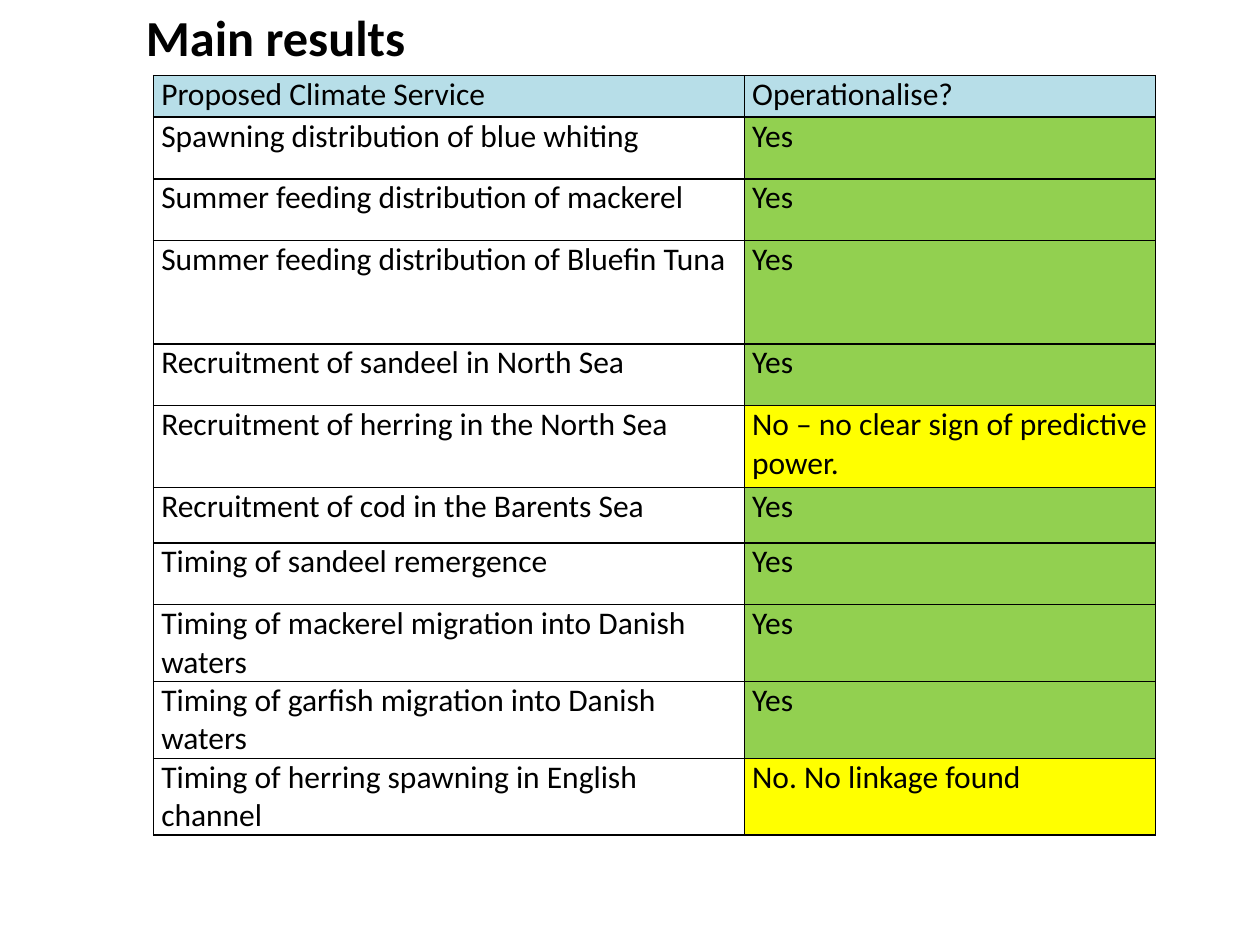
"""Build the "Main results" slide: proposed climate services and whether to operationalise them."""
from lxml.etree import SubElement
from pptx import Presentation
from pptx.dml.color import RGBColor
from pptx.enum.text import MSO_ANCHOR, PP_ALIGN
from pptx.oxml.ns import qn
from pptx.util import Inches, Pt

FONT = "Calibri"
COLORS = {"text": "000000", "border": "000000", "header": "B7DEE8",
          "yes": "92D050", "no": "FFFF00"}
TITLE = "Main results"
HEADER = ("Proposed Climate Service", "Operationalise?")
SERVICES = [
    ("Spawning distribution of blue whiting", "Yes", 0.49),
    ("Summer feeding distribution of mackerel", "Yes", 0.49),
    ("Summer feeding distribution of Bluefin Tuna", "Yes", 0.82),
    ("Recruitment of sandeel in North Sea", "Yes", 0.49),
    ("Recruitment of herring in the North Sea", "No – no clear sign of predictive power.", 0.65),
    ("Recruitment of cod in the Barents Sea", "Yes", 0.44),
    ("Timing of sandeel remergence", "Yes", 0.49),
    ("Timing of mackerel migration into Danish waters", "Yes", 0.61),
    ("Timing of garfish migration into Danish waters", "Yes", 0.61),
    ("Timing of herring spawning in English channel", "No. No linkage found", 0.61),
]
JUSTIFIED_ROWS = (3, 4)
COLUMNS = (4.69, 3.26)
HEADER_HEIGHT = 0.33


def add_text(p, text, size, bold=False):
    r = p.add_run()
    r.text = text
    r.font.name, r.font.size, r.font.bold = FONT, Pt(size), bold
    r.font.color.rgb = RGBColor.from_string(COLORS["text"])


def add_borders(cell, width=1):
    tc_pr = cell._tc.get_or_add_tcPr()
    for side in ("lnL", "lnR", "lnT", "lnB"):
        ln = SubElement(tc_pr, qn(f"a:{side}"), w=str(Pt(width)))
        fill = SubElement(ln, qn("a:solidFill"))
        SubElement(fill, qn("a:srgbClr"), val=COLORS["border"])


def fill_cell(cell, text, color):
    cell.margin_left = cell.margin_right = Inches(0.06)
    cell.margin_top = cell.margin_bottom = 0
    cell.vertical_anchor = MSO_ANCHOR.TOP
    add_borders(cell)
    if color:
        cell.fill.solid()
        cell.fill.fore_color.rgb = RGBColor.from_string(COLORS[color])
    else:
        cell.fill.background()
    add_text(cell.text_frame.paragraphs[0], text, 18)


def add_title(s):
    tf = s.shapes.add_textbox(Inches(1.06), Inches(0.05), Inches(8.82), Inches(0.94)).text_frame
    tf.word_wrap = True
    tf.vertical_anchor = MSO_ANCHOR.TOP
    tf.margin_top = tf.margin_bottom = 0
    add_text(tf.paragraphs[0], TITLE, 28.8, bold=True)


def add_results(s):
    rows = [(*HEADER, HEADER_HEIGHT)] + SERVICES
    height = sum(row[2] for row in rows)
    table = s.shapes.add_table(len(rows), len(COLUMNS), Inches(1.22), Inches(0.6),
                               Inches(sum(COLUMNS)), Inches(height)).table
    table.first_row = table.horz_banding = False
    for column, width in zip(table.columns, COLUMNS):
        column.width = Inches(width)
    for i, (service, answer, row_height) in enumerate(rows):
        table.rows[i].height = Inches(row_height)
        verdict = "yes" if answer == "Yes" else "no"
        fills = (None, verdict) if i else ("header", "header")
        for j, text in enumerate((service, answer)):
            fill_cell(table.cell(i, j), text, fills[j])
    for i in JUSTIFIED_ROWS:
        table.cell(i, 1).text_frame.paragraphs[0].alignment = PP_ALIGN.JUSTIFY


def main():
    prs = Presentation()
    prs.slide_width, prs.slide_height = Inches(10), Inches(7.5)
    s = prs.slides.add_slide(prs.slide_layouts[6])
    add_title(s)
    add_results(s)
    prs.save("out.pptx")


if __name__ == "__main__":
    main()
